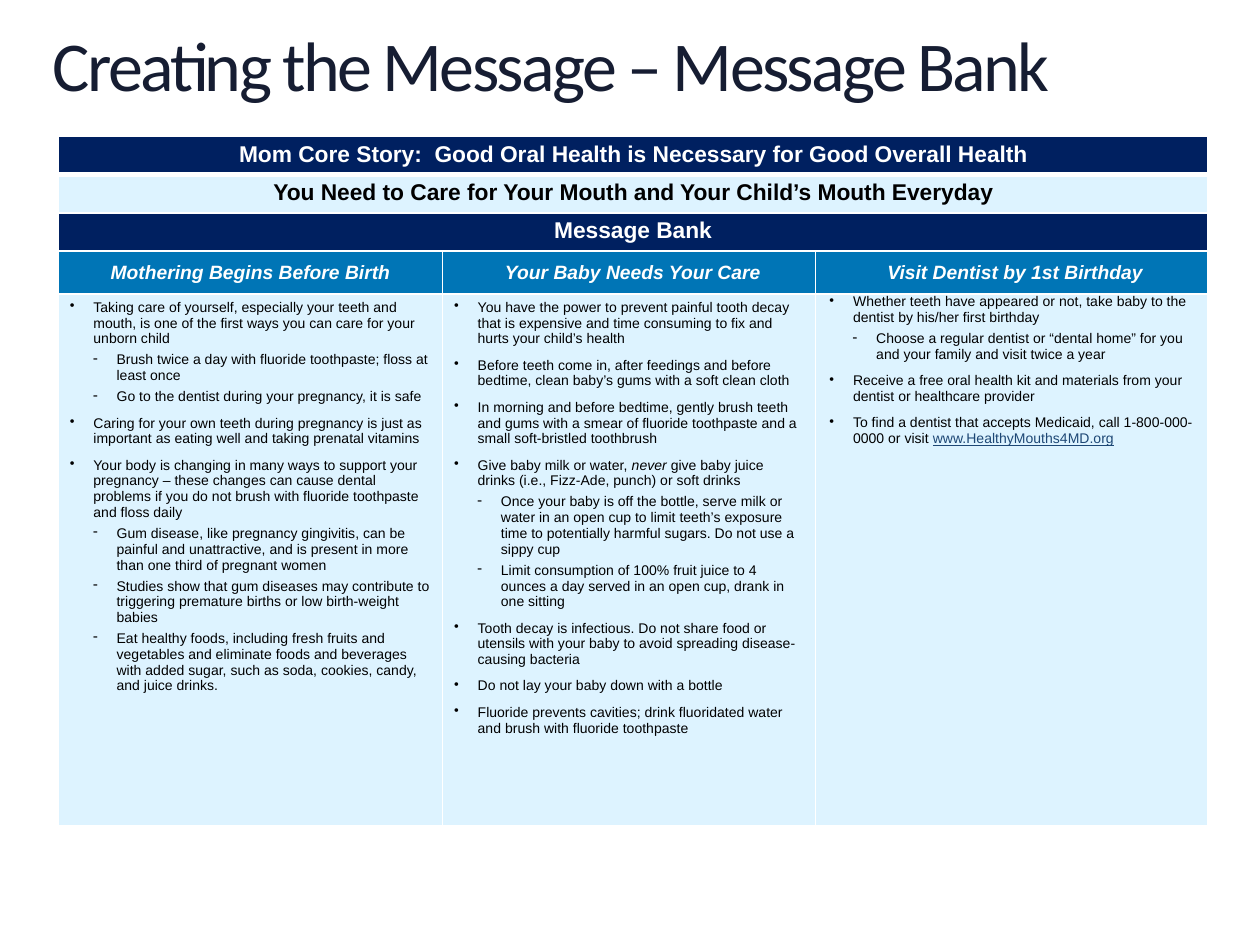
"""Build the Message Bank slide: a title above a three-column message table."""
from lxml import etree
from pptx import Presentation
from pptx import util as u
from pptx.dml.color import RGBColor
from pptx.enum import text
from pptx.oxml import ns

NAVY = RGBColor(0x00, 0x20, 0x60)
BLUE = RGBColor(0x00, 0x75, 0xB6)
PALE = RGBColor(0xDD, 0xF3, 0xFF)
WHITE = RGBColor(0xFF, 0xFF, 0xFF)
BLACK = RGBColor(0x00, 0x00, 0x00)
INK = RGBColor(0x16, 0x1D, 0x32)
LINK = RGBColor(0x1D, 0x47, 0x75)

TITLE = "Creating the Message – Message Bank"
BANNERS = [
    ("Mom Core Story:  Good Oral Health is Necessary for Good Overall Health", NAVY, WHITE),
    ("You Need to Care for Your Mouth and Your Child’s Mouth Everyday", PALE, BLACK),
    ("Message Bank", NAVY, WHITE),
]
HEADINGS = ["Mothering Begins Before Birth", "Your Baby Needs Your Care",
            "Visit Dentist by 1st Birthday"]
MAIN, SUB = 0, 1
ITALIC = {"italic": True}
WEB = {"color": LINK, "underline": True}
MESSAGES = [
    [
        (MAIN, "Taking care of yourself, especially your teeth and mouth, is one of the "
               "first ways you can care for your unborn child"),
        (SUB, "Brush twice a day with fluoride toothpaste; floss at least once"),
        (SUB, "Go to the dentist during your pregnancy, it is safe"),
        (MAIN, "Caring for your own teeth during pregnancy is just as important as eating "
               "well and taking prenatal vitamins"),
        (MAIN, "Your body is changing in many ways to support your pregnancy – these changes "
               "can cause dental problems if you do not brush with fluoride toothpaste and "
               "floss daily"),
        (SUB, "Gum disease, like pregnancy gingivitis, can be painful and unattractive, and "
              "is present in more than one third of pregnant women"),
        (SUB, "Studies show that gum diseases may contribute to triggering premature births "
              "or low birth-weight babies"),
        (SUB, "Eat healthy foods, including fresh fruits and vegetables and eliminate foods "
              "and beverages with added sugar, such as soda, cookies, candy, and juice drinks."),
    ],
    [
        (MAIN, "You have the power to prevent painful tooth decay that is expensive and time "
               "consuming to fix and hurts your child’s health"),
        (MAIN, "Before teeth come in, after feedings and before bedtime, clean baby’s gums "
               "with a soft clean cloth"),
        (MAIN, "In morning and before bedtime, gently brush teeth and gums with a smear of "
               "fluoride toothpaste and a small soft-bristled toothbrush"),
        (MAIN, "Give baby milk or water, ", ("never", ITALIC),
         " give baby juice drinks (i.e., Fizz-Ade, punch) or soft drinks"),
        (SUB, "Once your baby is off the bottle, serve milk or water in an open cup to limit "
              "teeth’s exposure time to potentially harmful sugars. Do not use a sippy cup"),
        (SUB, "Limit consumption of 100% fruit juice to 4 ounces a day served in an open cup, "
              "drank in one sitting"),
        (MAIN, "Tooth decay is infectious. Do not share food or utensils with your baby to "
               "avoid spreading disease-causing bacteria"),
        (MAIN, "Do not lay your baby down with a bottle"),
        (MAIN, "Fluoride prevents cavities; drink fluoridated water and brush with fluoride "
               "toothpaste"),
    ],
    [
        (MAIN, "Whether teeth have appeared or not, take baby to the dentist by his/her first "
               "birthday"),
        (SUB, "Choose a regular dentist or “dental home” for you and your family and visit "
              "twice a year"),
        (MAIN, "Receive a free oral health kit and materials from your dentist or healthcare "
               "provider"),
        (MAIN, "To find a dentist that accepts Medicaid, call 1-800-000-0000 or visit ",
         ("www.HealthyMouths4MD.org", WEB)),
    ],
]
BULLETS = {MAIN: ("•", 13.5, 6), SUB: ("-", 26.75, 3)}
HANG = 13.5
COLUMNS = [219.6, 213.1, 223.9]
ROWS = [21.8, 21.8, 21.8, 24.7, 303.5]
CELL_INSETS = (6.5, 3.1)
LAST_INSETS = (7.9, 0)


def write(para, words, size=8, color=BLACK, font="Arial", bold=False, italic=False,
          underline=False, align=None, spacing=None):
    """Add one formatted span to a paragraph."""
    span = para.add_run()
    span.text = words
    span.font.size = u.Pt(size)
    span.font.name = font
    span.font.bold, span.font.italic, span.font.underline = bold, italic, underline
    span.font.color.rgb = color
    if align is not None:
        para.alignment = align
    if spacing is not None:
        span.font._element.set("spc", str(int(spacing * 100)))


def add_bullet(para, level):
    """Give a paragraph the mark and hanging indent of its level."""
    mark, left, _ = BULLETS[level]
    props = para._p.get_or_add_pPr()
    props.set("marL", str(u.Pt(left)))
    props.set("indent", str(-u.Pt(HANG)))
    etree.SubElement(props, ns.qn("a:buChar")).set("char", mark)


def style_cell(cell, fill, insets=CELL_INSETS, top=1, bottom=1):
    """Set the fill, insets and white borders of a cell."""
    cell.fill.solid()
    cell.fill.fore_color.rgb = fill
    cell.margin_left = cell.margin_right = u.Pt(insets[0])
    cell.margin_top = cell.margin_bottom = u.Pt(insets[1])
    props = cell._tc.get_or_add_tcPr()
    for place, (side, width) in enumerate([("L", 1), ("R", 1), ("T", top), ("B", bottom)]):
        line = etree.Element(ns.qn("a:ln" + side), w=str(u.Pt(width)))
        solid = etree.SubElement(line, ns.qn("a:solidFill"))
        etree.SubElement(solid, ns.qn("a:srgbClr")).set("val", str(WHITE))
        props.insert(place, line)


def fill_messages(cell, messages):
    """Write a bulleted list into a cell."""
    for index, (level, *parts) in enumerate(messages):
        para = cell.text_frame.add_paragraph() if index else cell.text_frame.paragraphs[0]
        add_bullet(para, level)
        if index:
            para.space_before = u.Pt(BULLETS[level][2])
        for part in parts:
            words, style = (part, {}) if isinstance(part, str) else part
            write(para, words, **style)


def add_title(page):
    """Add the slide title."""
    box = page.shapes.add_textbox(u.Pt(30.2), u.Pt(18), u.Pt(660), u.Pt(44))
    frame = box.text_frame
    frame.word_wrap = True
    frame.margin_left = frame.margin_right = frame.margin_top = frame.margin_bottom = 0
    frame.paragraphs[0].line_spacing = 0.9
    write(frame.paragraphs[0], TITLE, size=40, color=INK, font="Calibri", spacing=-1.5)


def add_message_table(page):
    """Add the banners, column headings and message lists."""
    center = text.PP_ALIGN.CENTER
    table = page.shapes.add_table(len(ROWS), len(COLUMNS), u.Pt(33.4), u.Pt(78),
                                  u.Pt(sum(COLUMNS)), u.Pt(sum(ROWS))).table
    table.first_row = table.horz_banding = False
    for column, width in zip(table.columns, COLUMNS):
        column.width = u.Pt(width)
    for row, height in zip(table.rows, ROWS):
        row.height = u.Pt(height)

    for row, (words, fill, color) in enumerate(BANNERS):
        for column in range(len(COLUMNS)):
            style_cell(table.cell(row, column), fill, top=3 if row == 1 else 1,
                       bottom=3 if row == 0 else 1)
        cell = table.cell(row, 0)
        cell.merge(table.cell(row, len(COLUMNS) - 1))
        write(cell.text_frame.paragraphs[0], words, size=13, color=color, bold=True,
              align=center)

    heading_row = len(BANNERS)
    for column, (heading, messages) in enumerate(zip(HEADINGS, MESSAGES)):
        cell = table.cell(heading_row, column)
        style_cell(cell, BLUE)
        if column:
            cell.margin_left = u.Pt(CELL_INSETS[0] + 4.3)
        cell.vertical_anchor = text.MSO_ANCHOR.MIDDLE
        write(cell.text_frame.paragraphs[0], heading, size=11, color=WHITE, bold=True,
              italic=True, align=center)
        cell = table.cell(heading_row + 1, column)
        style_cell(cell, PALE, LAST_INSETS if column == len(COLUMNS) - 1 else CELL_INSETS)
        fill_messages(cell, messages)


def main():
    """Build and save the deck."""
    deck = Presentation()
    deck.slide_width, deck.slide_height = u.Pt(720), u.Pt(540)
    page = deck.slides.add_slide(deck.slide_layouts[6])
    add_message_table(page)
    add_title(page)
    deck.save("out.pptx")


if __name__ == "__main__":
    main()
